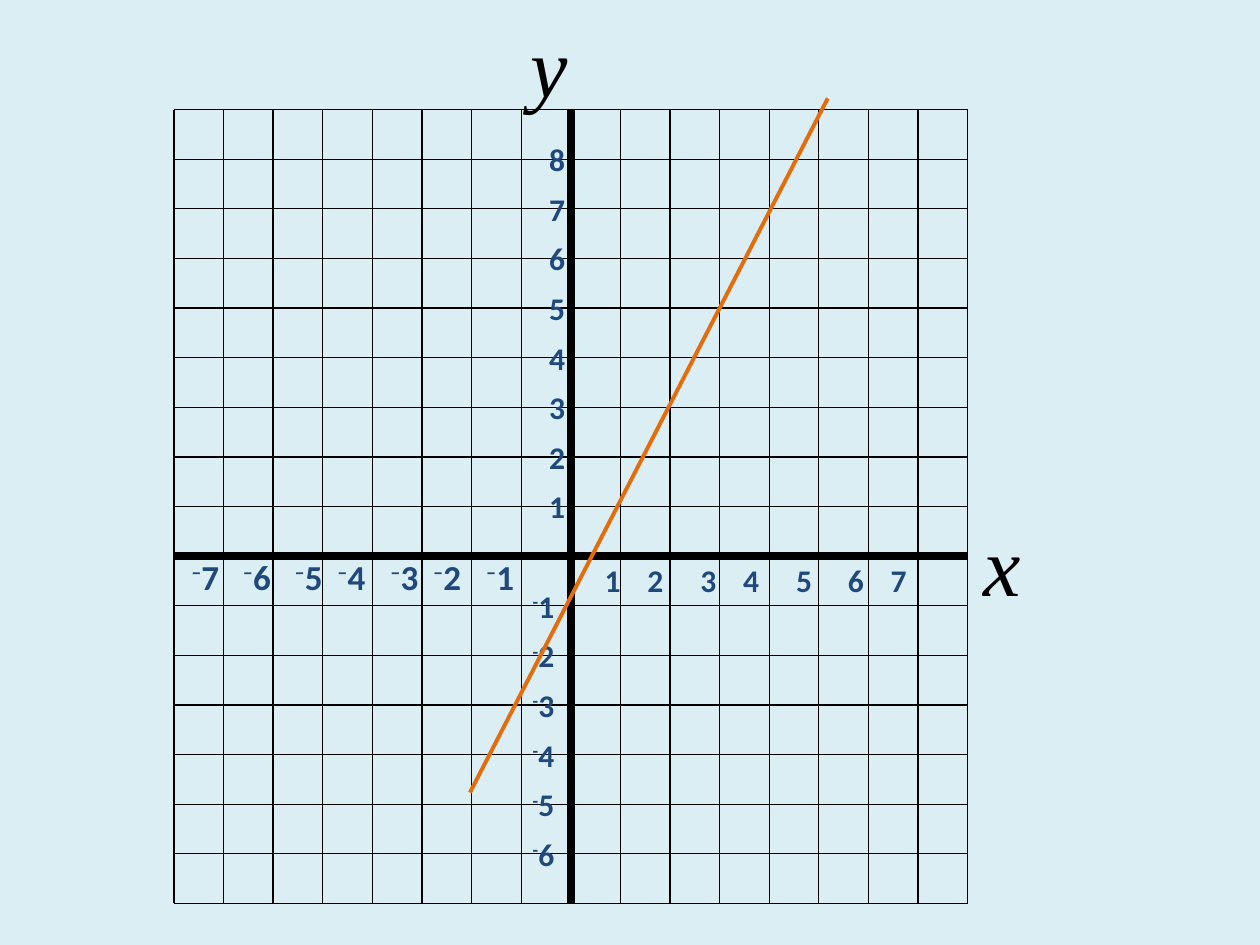
import pptx
import pptx.dml.color
import pptx.enum.shapes
import pptx.oxml.ns
import pptx.util
from lxml import etree

Inches = pptx.util.Inches
qn = pptx.oxml.ns.qn

BACKGROUND, BLACK, NAVY, ORANGE = "DBEEF4", "000000", "1F497D", "E46C0A"

LEFT, TOP, SIZE, CELLS = 1.38, 0.87, 6.3, 16
STEP = SIZE / CELLS
RIGHT, BOTTOM = LEFT + SIZE, TOP + SIZE
ORIGIN_X, ORIGIN_Y = LEFT + 8 * STEP, TOP + 9 * STEP

# Label and its tab stop in inches from the start of the row
POSITIVE_X = [("1", 0.17), ("2", 0.51), ("3", 0.93), ("4", 1.27),
              ("5", 1.69), ("6", 2.1), ("7", 2.44)]
NEGATIVE_X = [("–7", 0.26), ("–6", 0.67), ("–5", 1.08), ("–4", 1.42),
              ("–3", 1.84), ("–2", 2.18), ("–1", 2.6)]
POSITIVE_Y = range(1, 9)
NEGATIVE_Y = range(1, 7)
AXIS_NAMES = [("y", 4.11, 0, 1.11, 0.95), ("x", 7.71, 3.96, 0.63, 0.71)]
GRAPH = (3.73, 6.29, 6.57, 0.78)


def colour(value):
    return pptx.dml.color.RGBColor.from_string(value)


def add_line(page, x1, y1, x2, y2, value=BLACK, width=0.75):
    line = page.shapes.add_connector(
        pptx.enum.shapes.MSO_CONNECTOR.STRAIGHT,
        Inches(x1), Inches(y1), Inches(x2), Inches(y2))
    line.line.color.rgb = colour(value)
    line.line.width = pptx.util.Pt(width)
    etree.SubElement(line._element.spPr, qn("a:effectLst"))


def add_text(page, text, left, top, width, height, size=18, font="Calibri",
             value=NAVY, bold=True, italic=False, inset=0.05, stops=()):
    """Add a text box; minus signs are raised and stops are tab positions."""
    box = page.shapes.add_textbox(Inches(left), Inches(top), Inches(width), Inches(height))
    frame = box.text_frame
    frame.word_wrap = True
    frame.margin_top = Inches(inset)
    para = frame.paragraphs[0]
    pieces = text.replace("–", "|–|").replace("-", "|-|").split("|")
    for piece in filter(None, pieces):
        span = para.add_run()
        span.text = piece
        span.font.name = font
        span.font.size = pptx.util.Pt(size)
        span.font.bold = bold
        span.font.italic = italic
        span.font.color.rgb = colour(value)
        if piece in ("–", "-"):
            span._r.get_or_add_rPr().set("baseline", "30000")
    if stops:
        tabs = etree.SubElement(para._p.get_or_add_pPr(), qn("a:tabLst"))
        for stop in stops:
            etree.SubElement(tabs, qn("a:tab"), pos=str(Inches(stop)), algn="l")


def add_label_row(page, labels, *place, **style):
    text = "".join("\t" + label for label, _ in labels)
    add_text(page, text, *place, stops=[stop for _, stop in labels], **style)


def main():
    deck = pptx.Presentation()
    deck.slide_width, deck.slide_height = Inches(10), Inches(7.5)
    page = deck.slides.add_slide(deck.slide_layouts[6])
    page.background.fill.solid()
    page.background.fill.fore_color.rgb = colour(BACKGROUND)

    for index in range(CELLS + 1):
        x, y = LEFT + index * STEP, TOP + index * STEP
        add_line(page, x, TOP, x, BOTTOM)
        add_line(page, LEFT, y, RIGHT, y)
    add_line(page, ORIGIN_X, TOP, ORIGIN_X, BOTTOM, width=4.5)
    add_line(page, LEFT, ORIGIN_Y, RIGHT, ORIGIN_Y, width=4.5)

    for name, *place in AXIS_NAMES:
        add_text(page, name, *place, size=48, font="Times New Roman",
                 value=BLACK, bold=False, italic=True, inset=0.11)

    add_label_row(page, POSITIVE_X, 4.53, 4.4, 3.81, 0.4)
    add_label_row(page, NEGATIVE_X, 1.16, 4.36, 3.28, 0.44, size=20)
    for number in POSITIVE_Y:
        add_text(page, str(number), 4.26, ORIGIN_Y - number * STEP - 0.2, 0.54, 0.4)
    for number in NEGATIVE_Y:
        add_text(page, f"-{number}", 4.13, ORIGIN_Y + number * STEP - 0.2, 0.54, 0.4)

    add_line(page, *GRAPH, value=ORANGE, width=2.25)
    deck.save("out.pptx")


if __name__ == "__main__":
    main()
